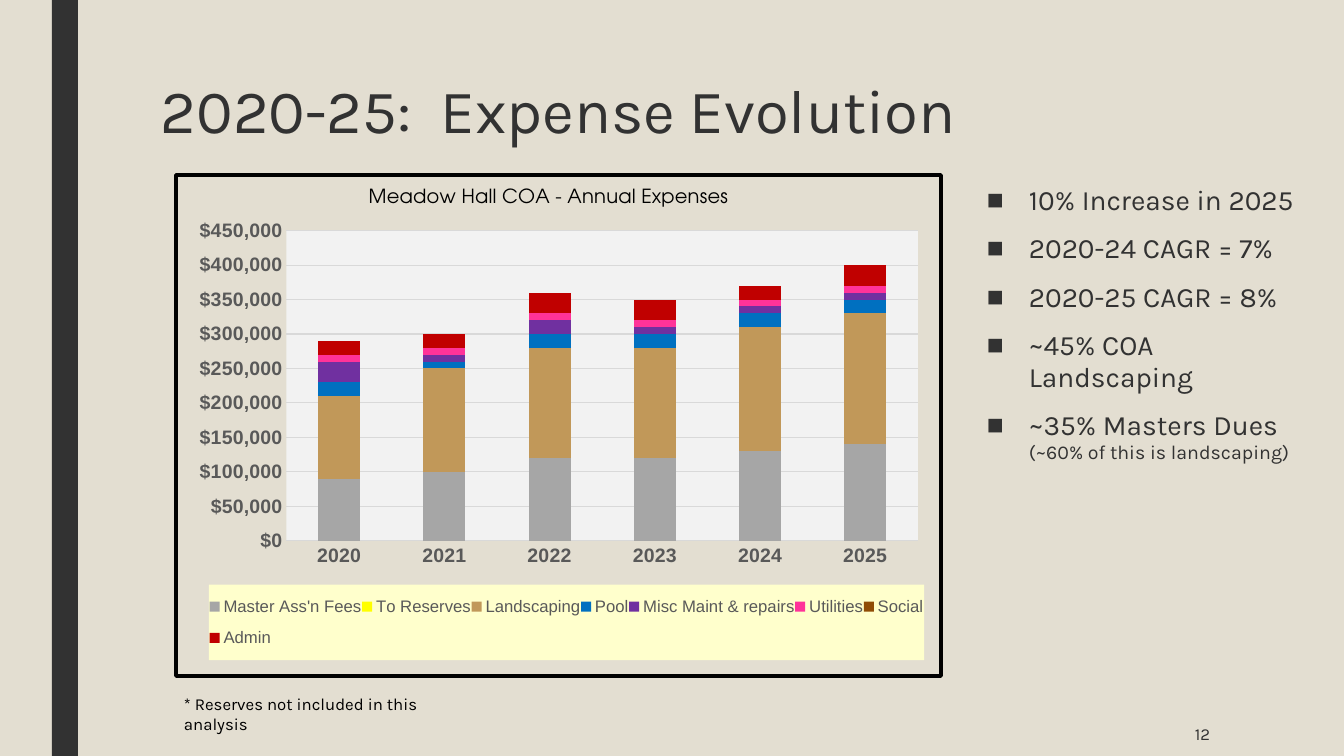
from dataclasses import dataclass

from lxml.etree import SubElement
from pptx import Presentation
from pptx.chart.data import CategoryChartData
from pptx.dml.color import RGBColor
from pptx.enum.chart import XL_CHART_TYPE, XL_LEGEND_POSITION, XL_TICK_MARK
from pptx.enum.shapes import MSO_SHAPE
from pptx.enum.text import MSO_ANCHOR, PP_ALIGN
from pptx.oxml import parse_xml
from pptx.oxml.ns import nsdecls, qn
from pptx.util import Emu, Pt


@dataclass(frozen=True)
class Theme:
    background: str = "E3DED1"
    ink: str = "323232"
    black: str = "000000"
    axis_text: str = "595959"
    grid: str = "D9D9D9"
    plot: str = "F2F2F2"
    legend: str = "FFFFCC"
    body_font: str = "Karla"
    chart_font: str = "Arial"
    chart_title_font: str = "TeX Gyre Adventor"
    title_size: int = 44
    bullet_size: int = 20
    axis_size: int = 14
    aside_size: int = 14
    chart_title_size: int = 14
    small_size: int = 12
    chart_size: int = 10


THEME = Theme()
EMU_PER_PX = 914400 / 100.8
CHART_WIDTH, CHART_HEIGHT = 769, 505

YEARS = ["2020", "2021", "2022", "2023", "2024", "2025"]
EXPENSES = [
    ("Master Ass'n Fees", "A6A6A6", [90000, 100000, 120000, 120000, 130000, 140000]),
    ("To Reserves", "FFFF00", [0, 0, 0, 0, 0, None]),
    ("Landscaping", "C19859", [120000, 150000, 160000, 160000, 180000, 190000]),
    ("Pool", "0070C0", [20000, 10000, 20000, 20000, 20000, 20000]),
    ("Misc Maint & repairs", "7030A0", [30000, 10000, 20000, 10000, 10000, 10000]),
    ("Utilities", "FF3399", [10000, 10000, 10000, 10000, 10000, 10000]),
    ("Social", "904C05", [0, 0, 0, 0, 0, 0]),
    ("Admin", "C00000", [20000, 20000, 30000, 30000, 20000, 30000]),
]
FINDINGS = [
    ("10% Increase in 2025", ""),
    ("2020-24 CAGR = 7%", ""),
    ("2020-25 CAGR = 8%", ""),
    ("~45% COA Landscaping", ""),
    ("~35% Masters Dues ", "(~60% of this is landscaping)"),
]


def px(length):
    return Emu(round(length * EMU_PER_PX))


def style_font(font, size, color, name=THEME.body_font, bold=False):
    font.size = Pt(size)
    font.name = name
    font.bold = bold
    font.color.rgb = RGBColor.from_string(color)


def add_frame(slide, bounds):
    """Add a wrapping text box and return its text frame."""
    frame = slide.shapes.add_textbox(*map(px, bounds)).text_frame
    frame.word_wrap = True
    return frame


def add_text(slide, bounds, text, size, color=THEME.ink):
    frame = add_frame(slide, bounds)
    frame.text = text
    style_font(frame.paragraphs[0].runs[0].font, size, color)
    return frame


def add_side_bar(slide):
    bar = slide.shapes.add_shape(MSO_SHAPE.RECTANGLE, px(52), px(0), px(26), px(756))
    bar.shadow.inherit = False
    bar.fill.solid()
    bar.fill.fore_color.rgb = RGBColor.from_string(THEME.ink)
    bar.line.fill.background()


def set_square_bullet(para):
    properties = para._p.get_or_add_pPr()
    properties.set("marL", str(px(42)))
    properties.set("indent", str(px(-42)))
    SubElement(properties, qn("a:buFont"), typeface=THEME.chart_font)
    SubElement(properties, qn("a:buChar"), char="■")


def add_findings(slide, bounds):
    frame = add_frame(slide, bounds)
    for index, (finding, aside) in enumerate(FINDINGS):
        para = frame.add_paragraph() if index else frame.paragraphs[0]
        para.text = finding
        para.line_spacing = 0.94
        para.space_before = Pt(10)
        para.space_after = Pt(2)
        set_square_bullet(para)
        style_font(para.runs[0].font, THEME.bullet_size, THEME.ink)
        if aside:
            span = para.add_run()
            span.text = aside
            style_font(span.font, THEME.aside_size, THEME.ink)


def chart_layout(left, top, width=None, height=None):
    """Build a manual layout from px measured inside the chart."""
    target = '<c:layoutTarget val="inner"/>' if width else ""
    extent = (f'<c:w val="{width / CHART_WIDTH:.4f}"/>'
              f'<c:h val="{height / CHART_HEIGHT:.4f}"/>') if width else ""
    return parse_xml(
        f'<c:layout {nsdecls("c")}><c:manualLayout>{target}'
        '<c:xMode val="edge"/><c:yMode val="edge"/>'
        f'<c:x val="{left / CHART_WIDTH:.4f}"/><c:y val="{top / CHART_HEIGHT:.4f}"/>'
        f'{extent}</c:manualLayout></c:layout>'
    )


def chart_surface(fill=None, border=None, points=0):
    """Build the fill and outline of one chart part."""
    def paint(color):
        if color is None:
            return "<a:noFill/>"
        return f'<a:solidFill><a:srgbClr val="{color}"/></a:solidFill>'

    return parse_xml(
        f'<c:spPr {nsdecls("c", "a")}>{paint(fill)}'
        f'<a:ln w="{Pt(points)}">{paint(border)}</a:ln></c:spPr>'
    )


def place_part(part, layout):
    """Replace the layout of a plot area, chart title or legend."""
    for old in part.findall(qn("c:layout")):
        part.remove(old)
    overlay = part.find(qn("c:overlay"))
    if overlay is None:
        part.insert(0, layout)
    else:
        overlay.addprevious(layout)


def style_axes(chart):
    for axis in (chart.category_axis, chart.value_axis):
        axis.major_tick_mark = axis.minor_tick_mark = XL_TICK_MARK.NONE
        style_font(axis.tick_labels.font, THEME.axis_size, THEME.axis_text,
                   THEME.chart_font, True)
    values = chart.value_axis
    values.minimum_scale, values.maximum_scale = 0, 450000
    values.major_unit = 50000
    values.tick_labels.number_format = '"$"#,##0'
    values.tick_labels.number_format_is_linked = False
    values.format.line.fill.background()
    for part in (chart.category_axis, values.major_gridlines):
        part.format.line.width = Pt(0.75)
        part.format.line.color.rgb = RGBColor.from_string(THEME.grid)


def add_expense_chart(slide, left, top):
    data = CategoryChartData(number_format='"$"#,##0')
    data.categories = YEARS
    for name, _, values in EXPENSES:
        data.add_series(name, values)
    bounds = map(px, (left, top, CHART_WIDTH, CHART_HEIGHT))
    chart = slide.shapes.add_chart(XL_CHART_TYPE.COLUMN_STACKED, *bounds, data).chart
    style_font(chart.font, THEME.chart_size, THEME.black)
    style_axes(chart)

    plot = chart.plots[0]
    plot.vary_by_categories = False
    plot.gap_width, plot.overlap = 150, 100
    for series, (_, color, _) in zip(plot.series, EXPENSES):
        series.format.fill.solid()
        series.format.fill.fore_color.rgb = RGBColor.from_string(color)

    chart.has_title = True
    title = chart.chart_title.text_frame
    title.text = "Meadow Hall COA - Annual Expenses"
    style_font(title.paragraphs[0].runs[0].font, THEME.chart_title_size,
               THEME.black, THEME.chart_title_font)

    chart.has_legend = True
    legend = chart.legend
    legend.position = XL_LEGEND_POSITION.BOTTOM
    legend.include_in_layout = False
    style_font(legend.font, THEME.small_size, THEME.axis_text, THEME.chart_font)

    body = chart.element.find(qn("c:chart"))
    area = body.find(qn("c:plotArea"))
    key = body.find(qn("c:legend"))
    place_part(body.find(qn("c:title")), chart_layout(190, 8))
    place_part(key, chart_layout(33, 413, 719, 76))
    place_part(area, chart_layout(111, 56, 635, 313))
    key.find(qn("c:overlay")).addnext(chart_surface(THEME.legend))
    area.append(chart_surface(THEME.plot))
    body.addnext(chart_surface(border=THEME.black, points=3))


def main():
    deck = Presentation()
    deck.slide_width, deck.slide_height = px(1344), px(756)
    slide = deck.slides.add_slide(deck.slide_layouts[6])
    slide.background.fill.solid()
    slide.background.fill.fore_color.rgb = RGBColor.from_string(THEME.background)
    add_side_bar(slide)
    title = add_text(slide, (151, 76, 1058, 100), "2020-25:  Expense Evolution",
                     THEME.title_size)
    title.paragraphs[0].line_spacing = 0.89
    number = add_text(slide, (1044, 712, 176, 44), "12", THEME.small_size)
    number.vertical_anchor = MSO_ANCHOR.MIDDLE
    number.paragraphs[0].alignment = PP_ALIGN.RIGHT
    add_findings(slide, (977, 180, 333, 395))
    add_expense_chart(slide, 174, 173)
    add_text(slide, (174, 689, 303, 30), "* Reserves not included in this analysis",
             THEME.small_size, THEME.black)
    deck.save("out.pptx")


if __name__ == "__main__":
    main()
